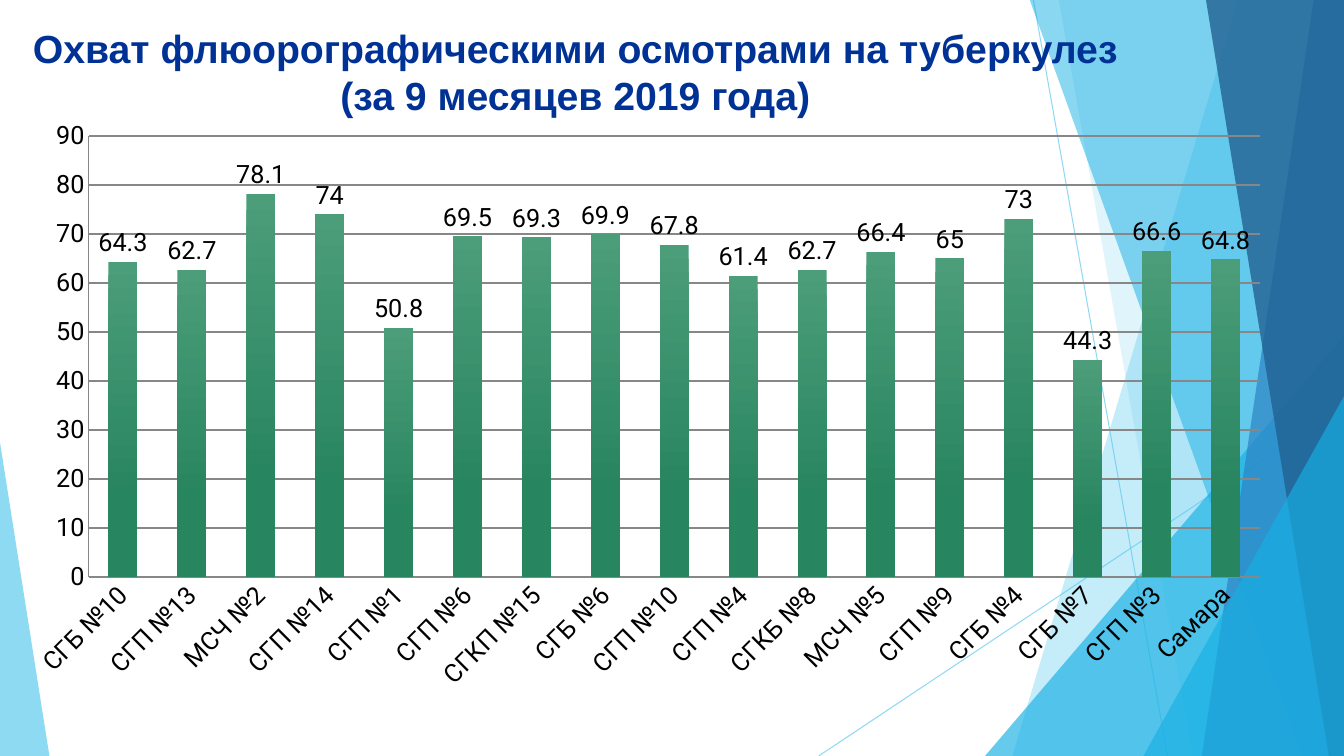
from lxml import etree
from pptx import Presentation
from pptx.chart.data import CategoryChartData
from pptx.dml.color import RGBColor
from pptx.enum.chart import XL_CHART_TYPE, XL_LABEL_POSITION, XL_TICK_MARK
from pptx.enum.shapes import MSO_CONNECTOR, MSO_SHAPE
from pptx.enum.text import MSO_ANCHOR, PP_ALIGN
from pptx.oxml import parse_xml
from pptx.oxml.ns import nsdecls, qn
from pptx.util import Inches, Pt

# Content
TITLE_LINES = ["Охват флюорографическими осмотрами на туберкулез", "(за 9 месяцев 2019 года)"]
COVERAGE = [
    ("СГБ №10", 64.3), ("СГП №13", 62.7), ("МСЧ №2", 78.1), ("СГП №14", 74),
    ("СГП №1", 50.8), ("СГП №6", 69.5), ("СГКП №15", 69.3), ("СГБ №6", 69.9),
    ("СГП №10", 67.8), ("СГП №4", 61.4), ("СГКБ №8", 62.7), ("МСЧ №5", 66.4),
    ("СГП №9", 65), ("СГБ №4", 73), ("СГБ №7", 44.3), ("СГП №3", 66.6), ("Самара", 64.8),
]
WIDTH, HEIGHT, TOP = 13.33, 7.5, -0.01

# Background: lines as (from, to); bands as (top left, bottom left, colour, opacity)
LINES = [((10.25, 0), (11.58, HEIGHT)), ((WIDTH, 4.03), (8.12, HEIGHT))]
BACK_BANDS = [(12.28, 10.04, "5FCBEF", 36), (10.5, 11.83, "5FCBEF", 20)]
FRONT_BANDS = [(10.21, 12.91, "17B0E4", 50), (13.03, 11.92, "2E83C3", 70),
               (11.96, 13.18, "226292", 80)]
# Triangles as (left, top, width, apex position, colour, opacity)
LARGE_TRIANGLE = (9.77, 3.33, 3.56, 1, "17B0E4", 66)
SMALL_TRIANGLE = (11.34, 3.93, 1.99, 1, "17B0E4", 66)
LEFT_TRIANGLE = (0, 4.39, 0.49, 0, "5FCBEF", 70)

TITLE_FORMAT = {"size": Pt(28), "bold": True, "name": "Arial"}
CHART_FORMAT = {"size": Pt(18), "bold": False, "name": "Roboto"}
PLOT_LAYOUT = {"x": 0.06, "y": 0.044, "w": 0.92, "h": 0.744}


def color(hex_value):
    return RGBColor.from_string(hex_value)


def apply_format(target, values):
    for name, value in values.items():
        setattr(target, name, value)


def set_opacity(element, percent):
    for rgb in element.iter(qn("a:srgbClr")):
        etree.SubElement(rgb, qn("a:alpha")).set("val", str(percent * 1000))


def paint(shape, hex_value, opacity):
    shape.shadow.inherit = False
    shape.fill.solid()
    shape.fill.fore_color.rgb = color(hex_value)
    shape.line.fill.background()
    set_opacity(shape.fill._xPr, opacity)


def add_line(slide, start, end):
    line = slide.shapes.add_connector(
        MSO_CONNECTOR.STRAIGHT, *(Inches(value) for value in start + end))
    line.line.width = Pt(0.75)
    line.line.color.rgb = color("5FCBEF")
    properties = line._element.spPr
    set_opacity(properties, 70)
    etree.SubElement(properties, qn("a:effectLst"))


def add_band(slide, top_left, bottom_left, hex_value, opacity):
    corners = [(top_left, TOP), (WIDTH, TOP), (WIDTH, HEIGHT), (bottom_left, HEIGHT)]
    points = [(Inches(x), Inches(y)) for x, y in corners]
    builder = slide.shapes.build_freeform(*points[0])
    builder.add_line_segments(points[1:], close=True)
    paint(builder.convert_to_shape(), hex_value, opacity)


def add_triangle(slide, left, top, width, apex, hex_value, opacity):
    triangle = slide.shapes.add_shape(
        MSO_SHAPE.ISOSCELES_TRIANGLE, Inches(left), Inches(top),
        Inches(width), Inches(HEIGHT - top))
    triangle.adjustments[0] = apex
    paint(triangle, hex_value, opacity)


def add_title(slide):
    box = slide.shapes.add_textbox(Inches(0), Inches(0.02), Inches(11.41), Inches(1.38))
    apply_format(box.text_frame, {"word_wrap": True, "vertical_anchor": MSO_ANCHOR.MIDDLE})
    paragraph = box.text_frame.paragraphs[0]
    paragraph.alignment = PP_ALIGN.CENTER
    for index, text in enumerate(TITLE_LINES):
        if index:
            paragraph.add_line_break()
        run = paragraph.add_run()
        run.text = text
        apply_format(run.font, TITLE_FORMAT)
        run.font.color.rgb = color("003296")
        # Soft text shadow
        shadow = parse_xml(
            f'<a:effectLst {nsdecls("a")}><a:outerShdw blurRad="38100" dist="38100" '
            'dir="2700000" algn="tl"><a:srgbClr val="000000"><a:alpha val="43000"/>'
            '</a:srgbClr></a:outerShdw></a:effectLst>')
        run._r.rPr.find(qn("a:solidFill")).addnext(shadow)


def add_coverage_chart(slide):
    data = CategoryChartData()
    data.categories = [name for name, _ in COVERAGE]
    data.add_series("Series 1", [value for _, value in COVERAGE])
    chart = slide.shapes.add_chart(
        XL_CHART_TYPE.COLUMN_CLUSTERED, Inches(0.12), Inches(1.09),
        Inches(12.63), Inches(5.88), data).chart
    apply_format(chart, {"has_legend": False, "has_title": False})
    apply_format(chart.font, CHART_FORMAT)
    chart.font.color.rgb = color("000000")

    # Columns and labels
    plot = chart.plots[0]
    apply_format(plot, {"gap_width": 138, "overlap": -27, "vary_by_categories": False,
                        "has_data_labels": True})
    apply_format(plot.data_labels, {"show_value": True, "number_format": "General",
                                    "number_format_is_linked": False,
                                    "position": XL_LABEL_POSITION.OUTSIDE_END})
    fill = plot.series[0].format.fill
    fill.gradient()
    fill.gradient_angle = 270
    for stop, hex_value, position in zip(fill.gradient_stops, ("4C9D79", "278560"), (0, 0.75)):
        stop.color.rgb = color(hex_value)
        stop.position = position

    # Axes
    apply_format(chart.value_axis, {"minimum_scale": 0, "maximum_scale": 90, "major_unit": 10,
                                    "has_major_gridlines": True})
    gridlines = chart.value_axis.major_gridlines.format.line
    gridlines.color.rgb = color("878787")
    gridlines.width = Pt(1.25)
    for axis in (chart.category_axis, chart.value_axis):
        apply_format(axis, {"major_tick_mark": XL_TICK_MARK.NONE,
                            "minor_tick_mark": XL_TICK_MARK.NONE})
        axis.format.line.color.rgb = color("878787")
        axis.format.line.width = Pt(0.75)
    apply_format(chart.category_axis.tick_labels.font, CHART_FORMAT)
    label_body = chart.category_axis._element.find(qn("c:txPr")).find(qn("a:bodyPr"))
    label_body.set("rot", "-2700000")

    # Fixed plot area
    plot_area = chart._chartSpace.chart.plotArea
    for old_layout in plot_area.findall(qn("c:layout")):
        plot_area.remove(old_layout)
    sizes = "".join(f'<c:{key} val="{value}"/>' for key, value in PLOT_LAYOUT.items())
    plot_area.insert(0, parse_xml(
        f'<c:layout {nsdecls("c")}><c:manualLayout><c:layoutTarget val="inner"/>'
        f'<c:xMode val="edge"/><c:yMode val="edge"/>{sizes}</c:manualLayout></c:layout>'))


def main():
    presentation = Presentation()
    presentation.slide_width = Inches(WIDTH)
    presentation.slide_height = Inches(HEIGHT)
    slide = presentation.slides.add_slide(presentation.slide_layouts[6])
    for start, end in LINES:
        add_line(slide, start, end)
    for band in BACK_BANDS:
        add_band(slide, *band)
    add_triangle(slide, *LARGE_TRIANGLE)
    for band in FRONT_BANDS:
        add_band(slide, *band)
    for triangle in (SMALL_TRIANGLE, LEFT_TRIANGLE):
        add_triangle(slide, *triangle)
    add_title(slide)
    add_coverage_chart(slide)
    presentation.save("out.pptx")


if __name__ == "__main__":
    main()
